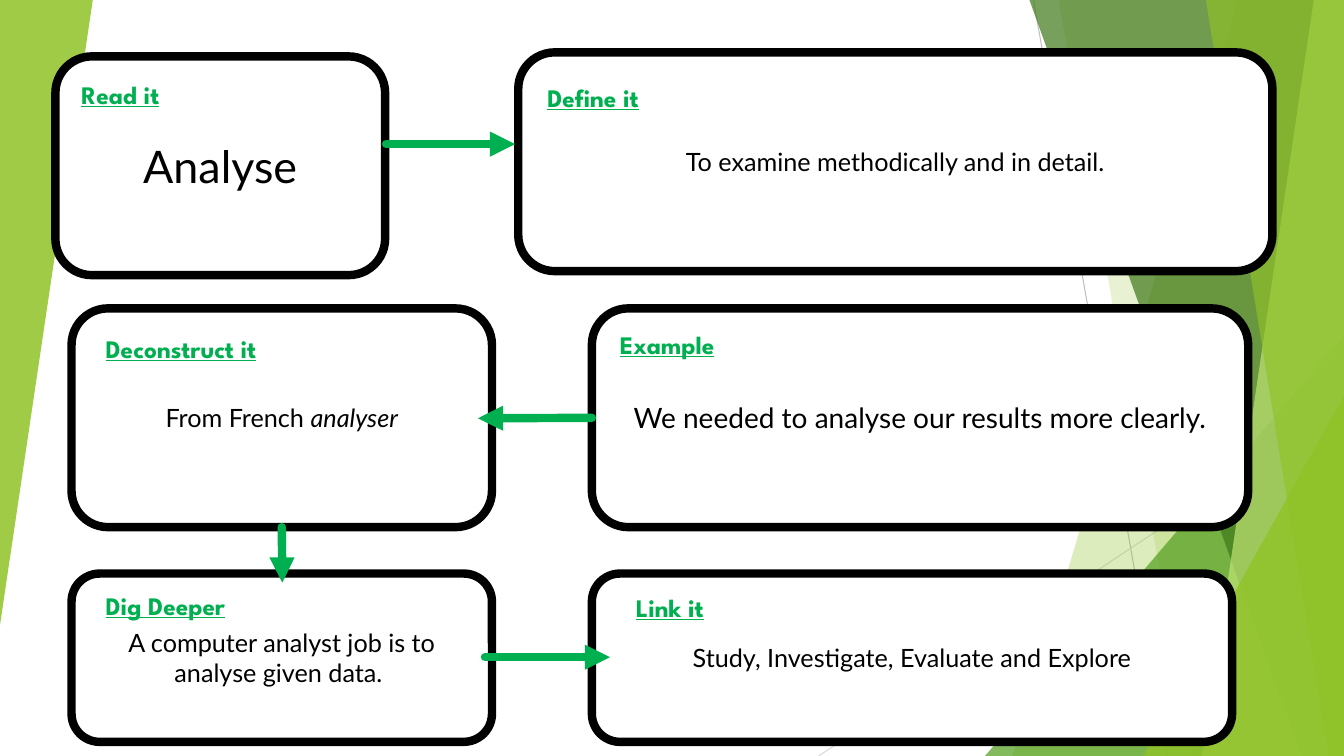
"""Build a vocabulary slide of six linked cards for the word Analyse."""
import pptx
import pptx.util
import pptx.dml.color
import pptx.enum.shapes
import pptx.enum.text
import pptx.oxml.ns
import lxml.etree

Inches, Pt = pptx.util.Inches, pptx.util.Pt
RGBColor = pptx.dml.color.RGBColor
SHAPE = pptx.enum.shapes.MSO_SHAPE
STRAIGHT = pptx.enum.shapes.MSO_CONNECTOR.STRAIGHT
qn = pptx.oxml.ns.qn

BLACK = RGBColor(0x00, 0x00, 0x00)
WHITE = RGBColor(0xFF, 0xFF, 0xFF)
GREEN = RGBColor(0x00, 0xB0, 0x50)
LIME = RGBColor(0x90, 0xC2, 0x26)
LEAF = RGBColor(0x54, 0xA0, 0x21)
FOREST = RGBColor(0x3F, 0x78, 0x19)
PALE = RGBColor(0xC0, 0xE4, 0x74)
GREY = RGBColor(0xBF, 0xBF, 0xBF)
LIGHT_GREY = RGBColor(0xD9, 0xD9, 0xD9)

WIDTH, HEIGHT = 13.33, 7.5

HAIRLINES = [((10.25, 0), (11.58, HEIGHT), GREY),
             ((WIDTH, 4.03), (8.12, HEIGHT), LIGHT_GREY)]

# Bands hold (top x, bottom x); triangles hold (left, top, width, height).
FACETS = [
    ((12.28, 10.04), LIME, 30, 0),
    ((10.5, 11.83), LIME, 20, 0),
    ((9.77, 3.33, 3.56, 4.17), LEAF, 72, 0),
    ((10.21, 12.91), FOREST, 70, 0),
    ((13.03, 11.92), PALE, 70, 0),
    ((11.96, 13.18), LIME, 65, 0),
    ((11.34, 3.93, 1.99, 3.57), LIME, 80, 0),
    ((0, 0, 0.92, 6.2), LIME, 85, 180),
]

CARDS = {
    "Read it": ((0.55, 0.56, 3.27, 2.17), (0.71, 0.74, 1.33),
                32, [("Analyse", False)]),
    "Define it": ((5.14, 0.52, 7.48, 2.17), (5.33, 0.77, 1.33),
                  18, [("To examine methodically and in detail.", False)]),
    "Deconstruct it": ((0.71, 3.06, 4.17, 2.17), (0.95, 3.26, 2.37),
                       18, [("From French ", False), ("analyser", True)]),
    "Example": ((5.87, 3.06, 6.51, 2.17), (6.05, 3.22, 1.33),
                20, [("We needed to analyse our results more clearly.", False)]),
    "Dig Deeper": ((0.71, 5.69, 4.17, 1.67), (0.95, 5.81, 1.67),
                   18, [("A computer analyst job is to analyse given data. ", False)]),
    "Link it": ((5.87, 5.69, 6.35, 1.67), (6.21, 5.83, 1.33),
                18, [("Study, Investigate, Evaluate and Explore", False)]),
}

ARROWS = [((5.87, 4.15), (4.74, 4.15), ("Example", 1)),
          ((3.83, 1.43), (5.11, 1.43), None),
          ((4.81, 6.52), (6.05, 6.52), None),
          ((2.8, 5.24), (2.8, 5.78), ("Deconstruct it", 2))]

HEADING = {"size": Pt(18), "name": "League Spartan", "bold": True, "underline": True}


def inches(values):
    return [Inches(v) for v in values]


def add_run(p, text, color, font):
    r = p.add_run()
    r.text = text
    r.font.color.rgb = color
    for key, value in font.items():
        setattr(r.font, key, value)


def add_line(s, start, end, color, width):
    line = s.shapes.add_connector(STRAIGHT, *inches(start + end))
    line.line.color.rgb = color
    line.line.width = Pt(width)
    lxml.etree.SubElement(line._element.spPr, qn("a:effectLst"))
    return line


def add_facet(s, outline, color, alpha, rotation):
    if len(outline) == 2:
        top, bottom = outline
        corners = [inches(c) for c in ((WIDTH, 0), (WIDTH, HEIGHT), (bottom, HEIGHT))]
        builder = s.shapes.build_freeform(Inches(top), 0)
        builder.add_line_segments(corners, close=True)
        sp = builder.convert_to_shape()
    else:
        sp = s.shapes.add_shape(SHAPE.ISOSCELES_TRIANGLE, *inches(outline))
        sp.adjustments[0] = 1
        sp.rotation = rotation
    sp.shadow.inherit = False
    sp.line.fill.background()
    sp.fill.solid()
    sp.fill.fore_color.rgb = color
    tint = sp._element.spPr.find(qn("a:solidFill"))[0]
    lxml.etree.SubElement(tint, qn("a:alpha"), val=str(alpha * 1000))


def add_card(s, frame, size, runs):
    sp = s.shapes.add_shape(SHAPE.ROUNDED_RECTANGLE, *inches(frame))
    sp.shadow.inherit = False
    sp.fill.solid()
    sp.fill.fore_color.rgb = WHITE
    sp.line.color.rgb = BLACK
    sp.line.width = Pt(6)
    tf = sp.text_frame
    tf.word_wrap = True
    tf.vertical_anchor = pptx.enum.text.MSO_ANCHOR.MIDDLE
    p = tf.paragraphs[0]
    p.alignment = pptx.enum.text.PP_ALIGN.CENTER
    for text, italic in runs:
        add_run(p, text, BLACK, {"size": Pt(size), "name": "Lato", "italic": italic})
    return sp


def add_arrow(s, start, end, joint, cards):
    arrow = add_line(s, start, end, GREEN, 6)
    if joint:
        name, side = joint
        arrow.begin_connect(cards[name], side)
    ln = arrow.line._get_or_add_ln()
    ln.set("cap", "rnd")
    lxml.etree.SubElement(ln, qn("a:tailEnd"), type="triangle")


def add_heading(s, text, place):
    tf = s.shapes.add_textbox(*inches(place + (0.4,))).text_frame
    tf.word_wrap = True
    add_run(tf.paragraphs[0], text, GREEN, HEADING)


def main():
    prs = pptx.Presentation()
    prs.slide_width, prs.slide_height = inches((WIDTH, HEIGHT))
    s = prs.slides.add_slide(prs.slide_layouts[6])
    for start, end, color in HAIRLINES:
        add_line(s, start, end, color, 0.75)
    for facet in FACETS:
        add_facet(s, *facet)
    cards = {name: add_card(s, frame, size, runs)
             for name, (frame, place, size, runs) in CARDS.items()}
    for arrow in ARROWS:
        add_arrow(s, *arrow, cards)
    for name, (frame, place, size, runs) in CARDS.items():
        add_heading(s, name, place)
    prs.save("out.pptx")


if __name__ == "__main__":
    main()
